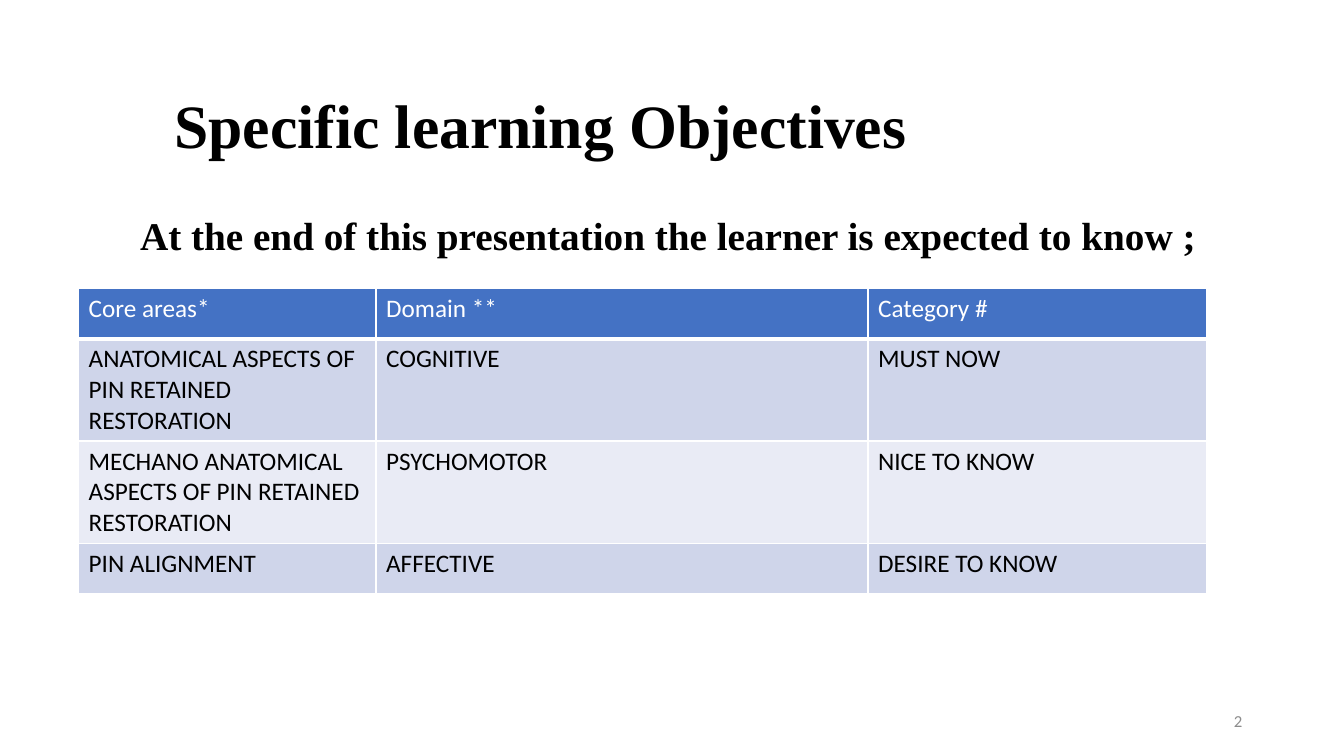
from lxml import etree
from pptx import Presentation
from pptx.dml.color import RGBColor
from pptx.enum import text
from pptx.oxml import ns
from pptx.util import Inches, Pt

COLORS = {"black": "000000", "white": "FFFFFF", "header": "4472C4",
          "odd": "CFD5EA", "even": "E9EBF5", "number": "8C8C8C"}


def write(tf, words, size, font, color, bold=False, align=text.PP_ALIGN.LEFT):
    tf.word_wrap = True
    p = tf.paragraphs[0]
    p.text = words
    p.alignment = align
    p.font.size = Pt(size)
    p.font.name = font
    p.font.bold = bold
    p.font.color.rgb = RGBColor.from_string(COLORS[color])
    return p


def add_border(cell, side, width):
    ln = etree.SubElement(cell._tc.get_or_add_tcPr(), ns.qn(f"a:ln{side}"), w=str(Pt(width)))
    fill = etree.SubElement(ln, ns.qn("a:solidFill"))
    etree.SubElement(fill, ns.qn("a:srgbClr"), val=COLORS["white"])


prs = Presentation()
prs.slide_width = Inches(13.33)
prs.slide_height = Inches(7.5)
s = prs.slides.add_slide(prs.slide_layouts[5])

title = s.shapes.title
title.left, title.top = Inches(1.63), Inches(0.67)
title.width, title.height = Inches(10.13), Inches(1.21)
title.text_frame.vertical_anchor = text.MSO_ANCHOR.MIDDLE
p = write(title.text_frame, "Specific learning Objectives", 44, "Times New Roman", "black", True)
p.line_spacing = 0.9

rows = [
    ["Core areas*", "Domain **", "Category #"],
    ["ANATOMICAL ASPECTS OF PIN RETAINED RESTORATION", "COGNITIVE", "MUST NOW"],
    ["MECHANO ANATOMICAL ASPECTS OF PIN RETAINED RESTORATION", "PSYCHOMOTOR", "NICE TO KNOW"],
    ["PIN ALIGNMENT", "AFFECTIVE", "DESIRE TO KNOW"],
]
table = s.shapes.add_table(4, 3, Inches(0.78), Inches(2.86), Inches(11.19), Inches(2)).table
for column, width in zip(table.columns, [2.95, 4.88, 3.36]):
    column.width = Inches(width)
for i, row in enumerate(rows):
    table.rows[i].height = Inches(0.5)
    fill = "header" if i == 0 else "odd" if i % 2 else "even"
    for j, words in enumerate(row):
        cell = table.cell(i, j)
        write(cell.text_frame, words, 18, "Calibri", "white" if i == 0 else "black")
        for side in "LRTB":
            thick = (i == 0 and side == "B") or (i == 1 and side == "T")
            add_border(cell, side, 3 if thick else 1)
        cell.fill.solid()
        cell.fill.fore_color.rgb = RGBColor.from_string(COLORS[fill])

intro = s.shapes.add_textbox(Inches(1.29), Inches(2.05), Inches(10.71), Inches(0.57))
write(intro.text_frame, "At the end of this presentation the learner is expected to know ;",
      28, "Times New Roman", "black", True)

number = s.shapes.add_textbox(Inches(9.42), Inches(6.95), Inches(3), Inches(0.4))
number.text_frame.vertical_anchor = text.MSO_ANCHOR.MIDDLE
write(number.text_frame, "2", 12, "Calibri", "number", align=text.PP_ALIGN.RIGHT)

prs.save("out.pptx")
